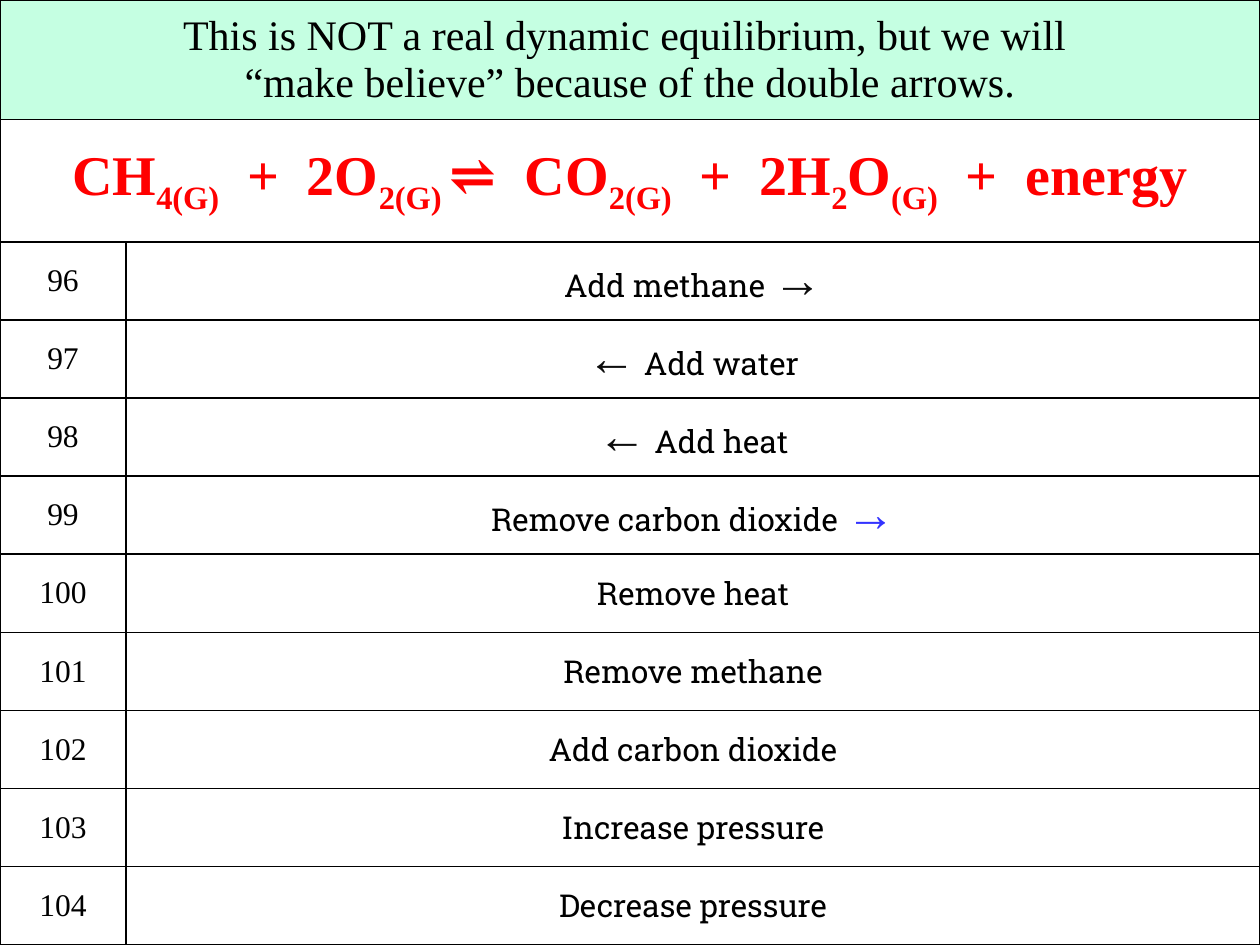
from lxml import etree
from pptx import Presentation
from pptx.dml.color import RGBColor
from pptx.enum.text import MSO_ANCHOR, PP_ALIGN
from pptx.oxml.ns import qn
from pptx.util import Inches, Pt

BLACK = RGBColor(0x00, 0x00, 0x00)
DARK = RGBColor(0x0D, 0x0D, 0x0D)
RED = RGBColor(0xFF, 0x00, 0x00)
BLUE = RGBColor(0x33, 0x33, 0xFF)
MINT = RGBColor(0xC5, 0xFF, 0xE2)
SERIF = "Times New Roman"
SLAB = "Roboto Slab"

HEADING = (
    "This is NOT a real dynamic equilibrium, but we will ",
    "“make believe” because of the double arrows.",
)
EQUATION = (
    ("CH", "4(G)"),
    ("  +  2O", "2(G) "),
    ("⇌  CO", "2(G)"),
    ("  +  2H", "2"),
    ("O", "(G)"),
    ("  +  energy", ""),
)
FIRST_NUMBER = 96
CHANGES = (
    ("Add methane", "→", DARK),
    ("Add water", "←", DARK),
    ("Add heat", "←", DARK),
    ("Remove carbon dioxide", "→", BLUE),
    ("Remove heat", None, None),
    ("Remove methane", None, None),
    ("Add carbon dioxide", None, None),
    ("Increase pressure", None, None),
    ("Decrease pressure", None, None),
)
HEADING_HEIGHT = 0.95
EQUATION_HEIGHT = 0.97
NUMBER_WIDTH = 1


def add_text(paragraph, text, size=18, font=SERIF, color=BLACK, bold=False, baseline=0):
    run = paragraph.add_run()
    run.text = text
    run.font.size = Pt(size)
    run.font.name = font
    run.font.color.rgb = color
    run.font.bold = bold
    properties = run.font._element
    for tag in ("a:ea", "a:cs"):
        etree.SubElement(properties, qn(tag), typeface=font)
    if baseline:
        properties.set("baseline", str(baseline * 1000))


def set_borders(cell, color=BLACK, width=1):
    properties = cell._tc.get_or_add_tcPr()
    for index, side in enumerate(("a:lnL", "a:lnR", "a:lnT", "a:lnB")):
        line = etree.Element(qn(side), w=str(Pt(width)))
        fill = etree.SubElement(line, qn("a:solidFill"))
        etree.SubElement(fill, qn("a:srgbClr"), val=str(color))
        properties.insert(index, line)


def format_cell(cell):
    cell.fill.background()
    cell.vertical_anchor = MSO_ANCHOR.MIDDLE
    cell.text_frame.paragraphs[0].alignment = PP_ALIGN.CENTER
    set_borders(cell)


def fill_heading(cell):
    cell.fill.solid()
    cell.fill.fore_color.rgb = MINT
    paragraph = cell.text_frame.paragraphs[0]
    first, second = HEADING
    add_text(paragraph, first, size=24)
    paragraph.add_line_break()
    add_text(paragraph, second, size=24)


def fill_equation(cell):
    paragraph = cell.text_frame.paragraphs[0]
    for formula, subscript in EQUATION:
        add_text(paragraph, formula, size=32, color=RED, bold=True)
        if subscript:
            add_text(paragraph, subscript, size=32, color=RED, bold=True, baseline=-25)


def fill_change(cell, text, arrow, color):
    paragraph = cell.text_frame.paragraphs[0]
    if arrow == "←":
        add_text(paragraph, arrow, size=28, color=color)
        add_text(paragraph, " ")
    add_text(paragraph, f"{text} " if arrow == "→" else text, font=SLAB)
    if arrow == "→":
        add_text(paragraph, arrow, size=28, color=color)


def add_equilibrium_table(slide, left, top, width, height):
    frame = slide.shapes.add_table(
        len(CHANGES) + 2, 2, Inches(left), Inches(top), Inches(width), Inches(height)
    )
    table = frame.table
    table.first_row = False
    table.horz_banding = False
    table.columns[0].width = Inches(NUMBER_WIDTH)
    table.columns[1].width = Inches(width - NUMBER_WIDTH)
    change_height = (height - HEADING_HEIGHT - EQUATION_HEIGHT) / len(CHANGES)
    heights = [HEADING_HEIGHT, EQUATION_HEIGHT] + [change_height] * len(CHANGES)
    for row, row_height in zip(table.rows, heights):
        row.height = Inches(row_height)
        for cell in row.cells:
            format_cell(cell)

    for row_index, fill_cell in enumerate((fill_heading, fill_equation)):
        cell = table.cell(row_index, 0)
        cell.merge(table.cell(row_index, 1))
        fill_cell(cell)
    for index, change in enumerate(CHANGES):
        number_cell = table.cell(index + 2, 0)
        add_text(number_cell.text_frame.paragraphs[0], str(FIRST_NUMBER + index))
        fill_change(table.cell(index + 2, 1), *change)


def main():
    presentation = Presentation()
    presentation.slide_width = Inches(10)
    presentation.slide_height = Inches(7.5)
    slide = presentation.slides.add_slide(presentation.slide_layouts[6])
    add_equilibrium_table(slide, 0, 0, 10, 7.5)
    presentation.save("out.pptx")


if __name__ == "__main__":
    main()
